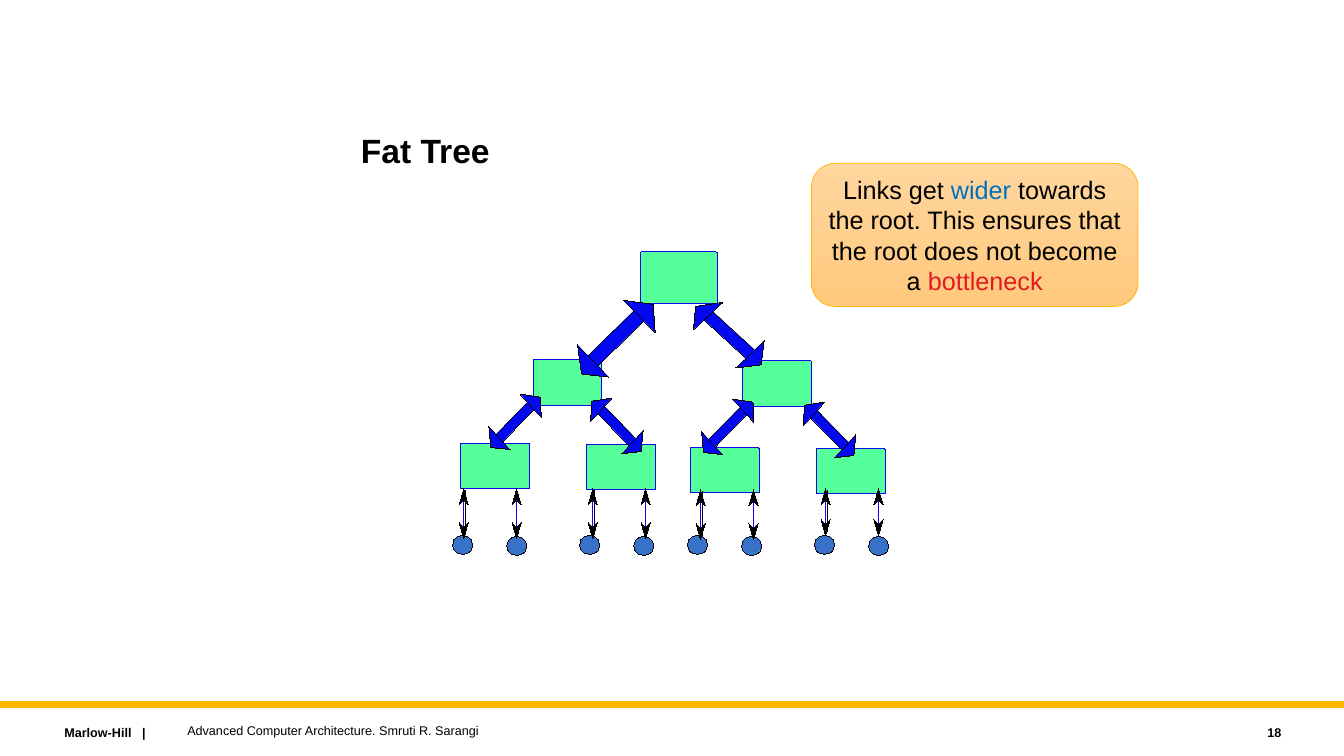
import dataclasses
import typing

import lxml.etree
import pptx
import pptx.dml.color
import pptx.enum.shapes
import pptx.enum.text
import pptx.oxml.ns
import pptx.util

CELL = pptx.util.Inches(0.1)
COLUMNS, ROWS = 133.33, 75
HAIRLINE = 0.01
BLACK, GOLD = "000000", "FFB600"
SWITCH_FILL, SWITCH_LINE = "55FF99", "0908EE"
LEAF_FILL, LEAF_LINE = "3771C8", "03040B"
LINK_FILL, CABLE_LINE = "0408EE", "1306EC"
LEAF_WIDTH, LEAF_HEIGHT, LEAF_TOP, LEAF_STEP = 2, 1.9, 53.1, 5.37
CABLE_STEP = 5.25

Point = tuple[float, float]
Kind = pptx.enum.shapes.MSO_SHAPE
Align = pptx.enum.text.PP_ALIGN
Anchor = pptx.enum.text.MSO_ANCHOR


@dataclasses.dataclass(frozen=True)
class Area:
    column: float
    row: float
    columns: float
    rows: float


@dataclasses.dataclass(frozen=True)
class Run:
    text: str
    color: str = BLACK


@dataclasses.dataclass(frozen=True)
class Label:
    area: Area
    runs: tuple[Run, ...]
    size: float
    bold: bool = False
    align: Align = Align.LEFT
    anchor: Anchor = Anchor.MIDDLE
    inset: bool = True
    spacing: float = 1.0


@dataclasses.dataclass(frozen=True)
class LinkStyle:
    width: float
    outlines: tuple[tuple[Point, ...], ...]


@dataclasses.dataclass(frozen=True)
class Link:
    column: float
    row: float
    style: LinkStyle
    mirrored: bool = False


@dataclasses.dataclass(frozen=True)
class Cluster:
    column: float
    row: float
    leaf_column: float
    cable_column: float
    cable_top: float
    cable_bottom: float


ROOT_LEFT = LinkStyle(6.3, (
    ((5.3, 0), (6.3, 1), (1, 6.2), (0, 5.2)),
    ((-0.7, 3.8), (2.4, 7), (-0.3, 6.7)),
    ((3.9, -0.6), (7, 2.6), (6.8, -0.2)),
))
ROOT_RIGHT = LinkStyle(5.7, (
    ((4.8, 0), (5.7, 0.8), (0.9, 5.2), (0, 4.4)),
    ((-0.6, 3.2), (2.2, 5.9), (-0.3, 5.6)),
    ((3.5, -0.6), (6.4, 2.1), (6.2, -0.2)),
))
BRANCH = LinkStyle(4.3, (
    ((3.6, 0), (4.3, 0.7), (0.7, 4.4), (0, 3.7)),
    ((-0.5, 2.7), (1.6, 5), (-0.3, 4.8)),
    ((2.6, -0.5), (4.7, 1.8), (4.6, -0.2)),
))
LINKS = (
    Link(58, 30.4, ROOT_LEFT),
    Link(69.5, 30.6, ROOT_RIGHT, True),
    Link(49, 39.6, BRANCH),
    Link(59, 40, BRANCH, True),
    Link(70.1, 40.1, BRANCH),
    Link(80.1, 40.4, BRANCH, True),
)
CLUSTERS = (
    Cluster(45.7, 44, 44.9, 46, 48.5, 53.4),
    Cluster(58.2, 44.1, 57.5, 58.8, 48.5, 53.4),
    Cluster(68.5, 44.4, 68.2, 69.5, 48.6, 53.5),
    Cluster(81, 44.5, 80.8, 81.9, 48.5, 53.1),
)
UPPER_SWITCHES = (
    Area(63.5, 25, 7.7, 5.1),
    Area(52.9, 35.7, 6.8, 4.5),
    Area(73.7, 35.8, 6.8, 4.5),
)
LABELS = (
    Label(Area(5.4, 71.4, 22.7, 2.5), (Run("Marlow-Hill   |"),), 9, True, anchor=Anchor.TOP),
    Label(Area(17.6, 71.2, 80, 2.5), (Run("Advanced Computer Architecture. Smruti R. Sarangi"),), 9),
    Label(Area(114.1, 71.4, 14, 2.5), (Run("18"),), 9, True, Align.RIGHT),
    Label(Area(35.8, 11.3, 60.8, 7.7), (Run("Fat Tree"),), 24, True, inset=False, spacing=0.9),
)
CALLOUT = Label(Area(80.5, 16.2, 32.4, 14.2), (
    Run("Links get "),
    Run("wider", "0070C0"),
    Run(" towards the root. This ensures that the root does not become a "),
    Run("bottleneck", "E21A23"),
), 18, align=Align.CENTER)


def cells(count: float) -> pptx.util.Emu:
    return pptx.util.Emu(round(count * CELL))


def color(value: str) -> pptx.dml.color.RGBColor:
    return pptx.dml.color.RGBColor.from_string(value)


def box(area: Area) -> tuple[pptx.util.Emu, ...]:
    return tuple(map(cells, dataclasses.astuple(area)))


def apply(target: typing.Any, values: dict[str, typing.Any]) -> None:
    for name, value in values.items():
        setattr(target, name, value)


def paint(shape: typing.Any, fill: str, line: str, width: float = HAIRLINE) -> None:
    shape.shadow.inherit = False
    shape.fill.solid()
    shape.fill.fore_color.rgb = color(fill)
    shape.line.color.rgb = color(line)
    shape.line.width = pptx.util.Pt(width)


def write(shape: typing.Any, label: Label) -> None:
    frame = shape.text_frame
    apply(frame, {"word_wrap": True, "vertical_anchor": label.anchor})
    if not label.inset:
        apply(frame, dict.fromkeys(("margin_left", "margin_top", "margin_right", "margin_bottom"), 0))
    paragraph = frame.paragraphs[0]
    apply(paragraph, {"alignment": label.align, "line_spacing": label.spacing})
    for part in label.runs:
        run = paragraph.add_run()
        run.text = part.text
        apply(run.font, {"name": "Arial", "size": pptx.util.Pt(label.size), "bold": label.bold})
        run.font.color.rgb = color(part.color)


def draw_shape(slide: typing.Any, kind: Kind, area: Area, fill: str, line: str) -> typing.Any:
    shape = slide.shapes.add_shape(kind, *box(area))
    paint(shape, fill, line)
    return shape


def draw_switch(slide: typing.Any, area: Area) -> None:
    shape = draw_shape(slide, Kind.ROUNDED_RECTANGLE, area, SWITCH_FILL, SWITCH_LINE)
    shape.adjustments[0] = 0.02


def draw_outline(slide: typing.Any, points: list[Point], fill: str) -> None:
    corners = [(cells(column), cells(row)) for column, row in points]
    builder = slide.shapes.build_freeform(*corners[0])
    builder.add_line_segments(corners[1:], close=True)
    paint(builder.convert_to_shape(), fill, BLACK)


def draw_link(slide: typing.Any, link: Link) -> None:
    for outline in link.style.outlines:
        points = [
            (link.column + (link.style.width - x if link.mirrored else x), link.row + y)
            for x, y in outline
        ]
        draw_outline(slide, points, LINK_FILL)


def draw_line(slide: typing.Any, column: float, top: float, bottom: float, line: str) -> None:
    connector = slide.shapes.add_connector(
        pptx.enum.shapes.MSO_CONNECTOR.STRAIGHT,
        cells(column), cells(top), cells(column), cells(bottom),
    )
    connector.line.color.rgb = color(line)
    connector.line.width = pptx.util.Pt(HAIRLINE)
    lxml.etree.SubElement(connector._element.spPr, pptx.oxml.ns.qn("a:effectLst"))


def draw_cable(slide: typing.Any, column: float, top: float, bottom: float) -> None:
    draw_line(slide, column, top + 0.2, bottom - 0.2, CABLE_LINE)
    for tip, direction in ((top, 1), (bottom, -1)):
        head = ((0, 1.1), (0.45, 1.55), (0, 0), (-0.45, 1.55))
        draw_outline(slide, [(column + x, tip + direction * y) for x, y in head], BLACK)


def draw_cluster(slide: typing.Any, cluster: Cluster) -> None:
    draw_line(slide, cluster.cable_column + 0.15, cluster.cable_top + 0.2,
              cluster.cable_bottom - 0.4, BLACK)
    for index in range(2):
        leaf = Area(cluster.leaf_column + index * LEAF_STEP, LEAF_TOP + index * 0.1,
                    LEAF_WIDTH, LEAF_HEIGHT)
        draw_shape(slide, Kind.OVAL, leaf, LEAF_FILL, LEAF_LINE)
        draw_cable(slide, cluster.cable_column + index * CABLE_STEP,
                   cluster.cable_top, cluster.cable_bottom)


def draw_callout(slide: typing.Any, label: Label) -> None:
    shape = draw_shape(slide, Kind.ROUNDED_RECTANGLE, label.area, GOLD, GOLD)
    shape.line.width = pptx.util.Pt(0.5)
    shape.fill.gradient()
    shape.fill.gradient_angle = 270
    for stop, value in zip(shape.fill.gradient_stops, ("FFD69E", "FFC97C")):
        stop.color.rgb = color(value)
    write(shape, label)


def main() -> None:
    presentation = pptx.Presentation()
    apply(presentation, {"slide_width": cells(COLUMNS), "slide_height": cells(ROWS)})
    slide = presentation.slides.add_slide(presentation.slide_layouts[6])
    draw_shape(slide, Kind.RECTANGLE, Area(0, 69.6, COLUMNS, 0.6), GOLD, GOLD)
    for label in LABELS:
        write(slide.shapes.add_textbox(*box(label.area)), label)
    for area in UPPER_SWITCHES + tuple(Area(c.column, c.row, 6.8, 4.5) for c in CLUSTERS):
        draw_switch(slide, area)
    for link in LINKS:
        draw_link(slide, link)
    for cluster in CLUSTERS:
        draw_cluster(slide, cluster)
    draw_callout(slide, CALLOUT)
    presentation.save("out.pptx")


if __name__ == "__main__":
    main()
